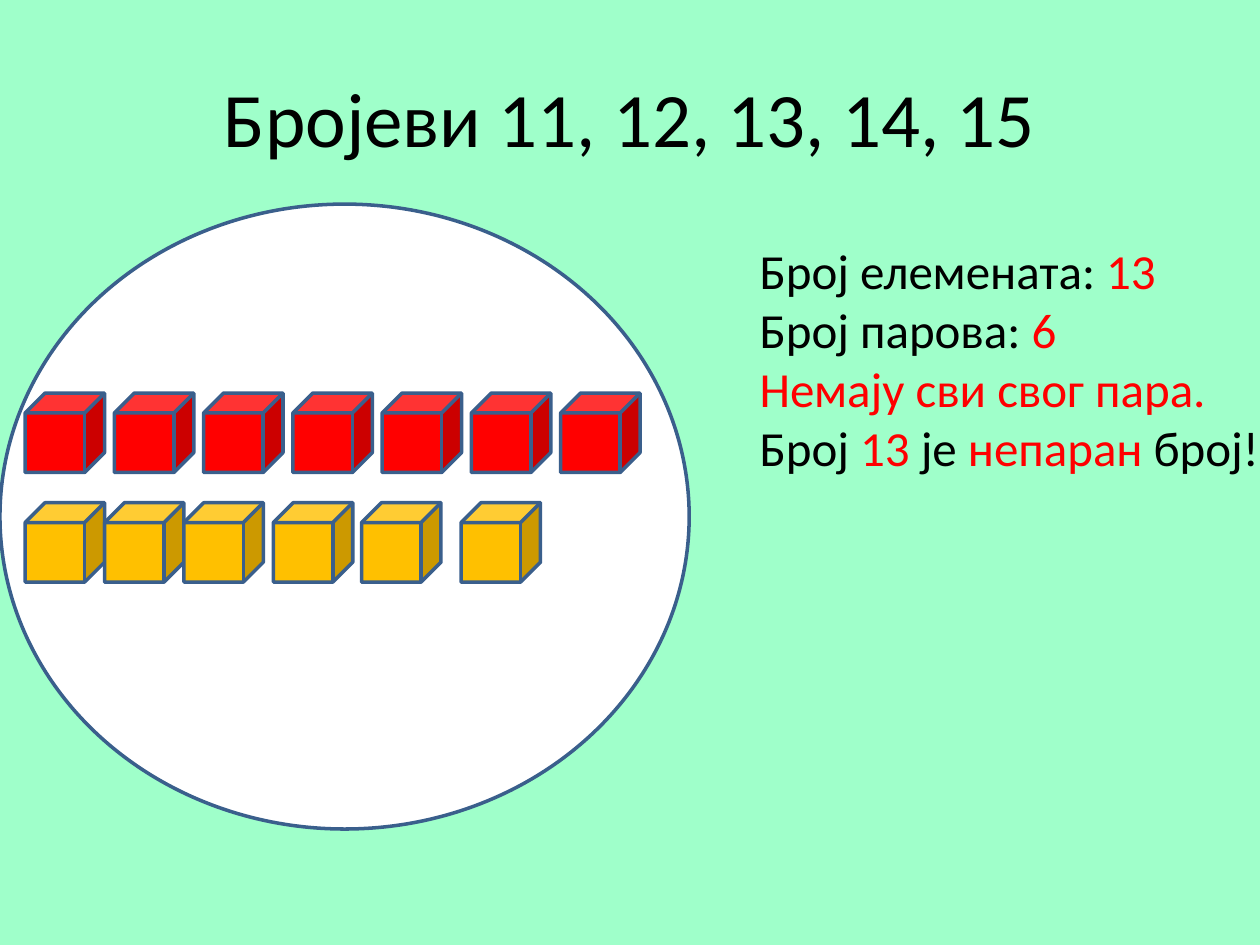
from dataclasses import dataclass

from pptx import Presentation
from pptx import util as u
from pptx.dml import color
from pptx.enum import shapes, text

BLACK, RED, YELLOW = "000000", "FF0000", "FFC000"
WHITE, OUTLINE, MINT = "FFFFFF", "3A5F8C", "9FFFCA"
CUBE_SIZE = 0.63
FIRST_CUBE, LAST_RED_CUBE, RED_COUNT = 0.2, 4.45, 7
RED_STEP = (LAST_RED_CUBE - FIRST_CUBE) / (RED_COUNT - 1)


@dataclass
class Area:
    left: float
    top: float
    width: float
    height: float

    def lengths(self) -> list[u.Length]:
        return [u.Inches(v) for v in (self.left, self.top, self.width, self.height)]


@dataclass
class Span:
    words: str
    tint: str = BLACK


@dataclass
class CubeRow:
    top: float
    fill: str
    lefts: list[float]


CUBE_ROWS = [
    CubeRow(3.12, RED, [FIRST_CUBE + RED_STEP * i for i in range(RED_COUNT)]),
    CubeRow(3.99, YELLOW, [FIRST_CUBE, 0.83, 1.46, 2.17, 2.87, 3.66]),
]
TITLE = [[Span("Бројеви 11, 12, 13, 14, 15")]]
FACTS = [
    [Span("Број елемената: "), Span("13", RED)],
    [Span("Број парова:"), Span(" 6", RED)],
    [Span("Немају сви свог пара.", RED)],
    [Span("Број "), Span("13 ", RED), Span("је "), Span("непаран", RED), Span(" број!")],
]


def paint(target, tint: str) -> None:
    target.rgb = color.RGBColor.from_string(tint)


def set_values(target, values: dict) -> None:
    for name, value in values.items():
        setattr(target, name, value)


def add_figure(page, kind: shapes.MSO_SHAPE, area: Area, fill: str) -> None:
    figure = page.shapes.add_shape(kind, *area.lengths())
    figure.shadow.inherit = False
    figure.fill.solid()
    paint(figure.fill.fore_color, fill)
    paint(figure.line.color, OUTLINE)
    figure.line.width = u.Pt(2)


def add_text(page, area: Area, lines: list[list[Span]], size: float,
             frame_format: dict, para_format: dict) -> None:
    box = page.shapes.add_textbox(*area.lengths())
    frame = box.text_frame
    set_values(frame, {"word_wrap": True, **frame_format})
    for index, line in enumerate(lines):
        para = frame.add_paragraph() if index else frame.paragraphs[0]
        set_values(para, para_format)
        for span in line:
            run = para.add_run()
            run.text = span.words
            set_values(run.font, {"name": "Calibri", "size": u.Pt(size)})
            paint(run.font.color, span.tint)


def main() -> None:
    deck = Presentation()
    set_values(deck, {"slide_width": u.Inches(10), "slide_height": u.Inches(7.5)})
    page = deck.slides.add_slide(deck.slide_layouts[6])
    page.background.fill.solid()
    paint(page.background.fill.fore_color, MINT)

    add_text(page, Area(0.5, 0.3, 9, 1.25), TITLE, 44,
             {"vertical_anchor": text.MSO_ANCHOR.MIDDLE},
             {"alignment": text.PP_ALIGN.CENTER})
    add_figure(page, shapes.MSO_SHAPE.OVAL, Area(0, 1.62, 5.47, 4.96), WHITE)
    for row in CUBE_ROWS:
        for left in row.lefts:
            area = Area(left, row.top, CUBE_SIZE, CUBE_SIZE)
            add_figure(page, shapes.MSO_SHAPE.CUBE, area, row.fill)
    add_text(page, Area(5.93, 1.86, 4.34, 1.99), FACTS, 28,
             {"auto_size": text.MSO_AUTO_SIZE.SHAPE_TO_FIT_TEXT},
             {"alignment": text.PP_ALIGN.LEFT})
    deck.save("out.pptx")


if __name__ == "__main__":
    main()
